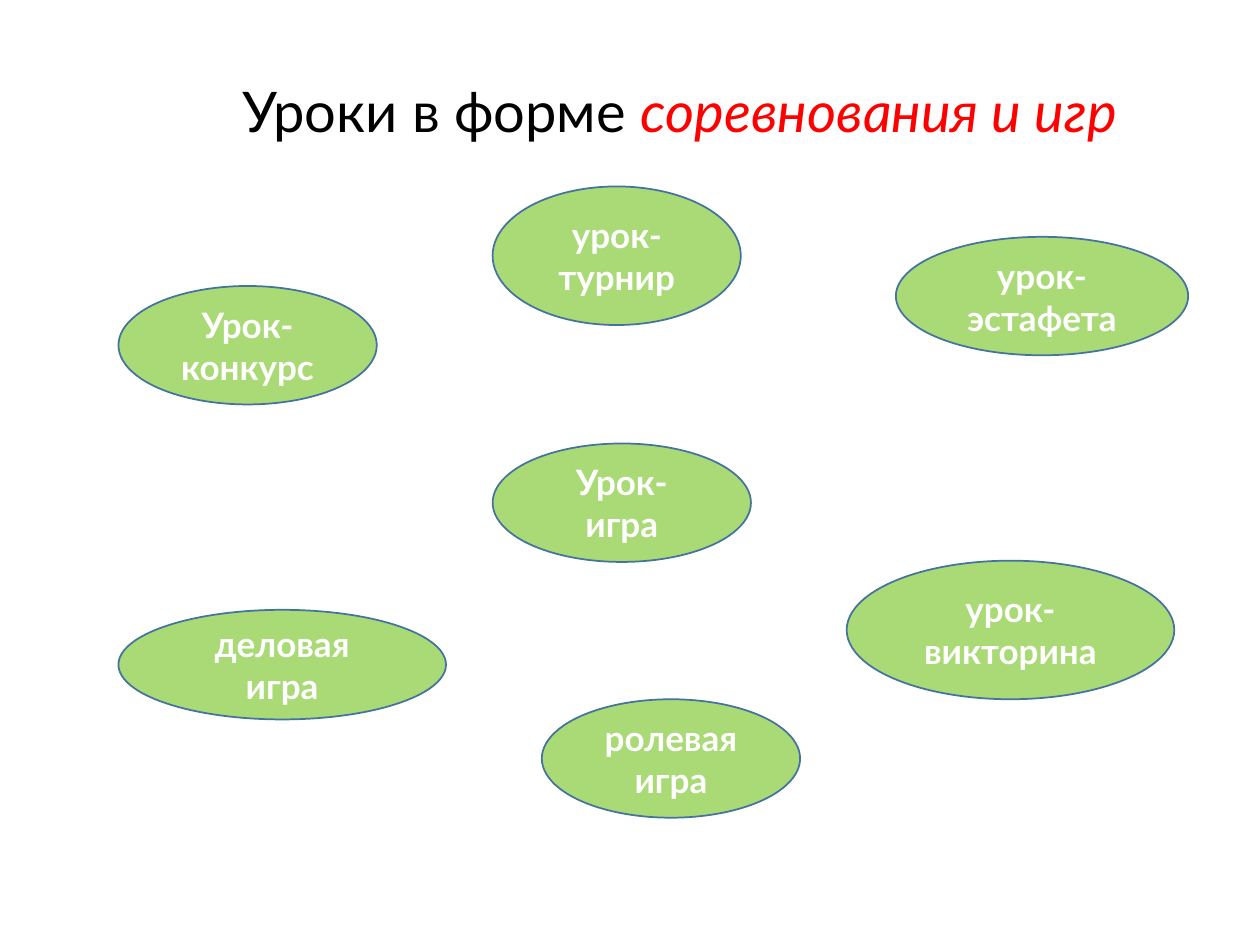
from lxml import etree
from pptx import Presentation
from pptx.dml.color import RGBColor
from pptx.enum import shapes, text
from pptx.oxml import ns
from pptx.util import Inches, Pt

FONT = "Lato"
COLORS = {"oval": "92D050", "outline": "43739E", "label": "FFFFFF",
          "title": "000000", "accent": "FF0000"}
LESSONS = [
    ("Урок-конкурс", (0.94, 2.27, 2.05, 0.94)),
    ("урок-турнир", (3.91, 1.48, 1.97, 1.1)),
    ("урок-эстафета", (7.11, 1.88, 2.32, 0.94)),
    ("деловая игра", (0.94, 4.84, 2.6, 0.87)),
    ("Урок-игра", (3.91, 3.52, 2.05, 0.94)),
    ("ролевая игра", (4.3, 5.55, 2.05, 0.94)),
    ("урок-викторина", (6.72, 4.45, 2.6, 1.1)),
]


def color(name):
    """Return the named colour of the palette."""
    return RGBColor.from_string(COLORS[name])


def add_title(s, box):
    """Place the two-coloured title in the box."""
    sp = s.shapes.title
    sp.left, sp.top, sp.width, sp.height = map(Inches, box)
    tf = sp.text_frame
    tf.word_wrap = False
    tf.auto_size = text.MSO_AUTO_SIZE.SHAPE_TO_FIT_TEXT
    tf.vertical_anchor = text.MSO_ANCHOR.MIDDLE
    p = tf.paragraphs[0]
    p.alignment = text.PP_ALIGN.CENTER
    p.font.name, p.font.size = FONT, Pt(32)
    for wording, name, italic in (("Уроки в форме ", "title", False),
                                  ("соревнования и игр", "accent", True)):
        r = p.add_run()
        r.text = wording
        r.font.color.rgb = color(name)
        r.font.italic = italic


def add_lesson(s, label, box):
    """Place one translucent labelled oval in the box."""
    sp = s.shapes.add_shape(shapes.MSO_SHAPE.OVAL, *map(Inches, box))
    sp.shadow.inherit = False
    sp.fill.solid()
    sp.fill.fore_color.rgb = color("oval")
    fill = sp.fill._xPr.find(ns.qn("a:solidFill"))
    etree.SubElement(fill[0], ns.qn("a:alpha"), val="78000")
    sp.line.color.rgb = color("outline")
    sp.line.width = Pt(1)
    tf = sp.text_frame
    tf.word_wrap = True
    tf.vertical_anchor = text.MSO_ANCHOR.MIDDLE
    p = tf.paragraphs[0]
    p.text = label
    p.alignment = text.PP_ALIGN.CENTER
    p.font.name, p.font.size, p.font.bold = FONT, Pt(20), True
    p.font.color.rgb = color("label")


def main():
    """Build the slide and save it."""
    prs = Presentation()
    prs.slide_width, prs.slide_height = Inches(10), Inches(7.5)
    s = prs.slides.add_slide(prs.slide_layouts[5])
    for label, box in LESSONS:
        add_lesson(s, label, box)
    add_title(s, (1.6, 0.55, 7.59, 0.64))
    prs.save("out.pptx")


if __name__ == "__main__":
    main()
